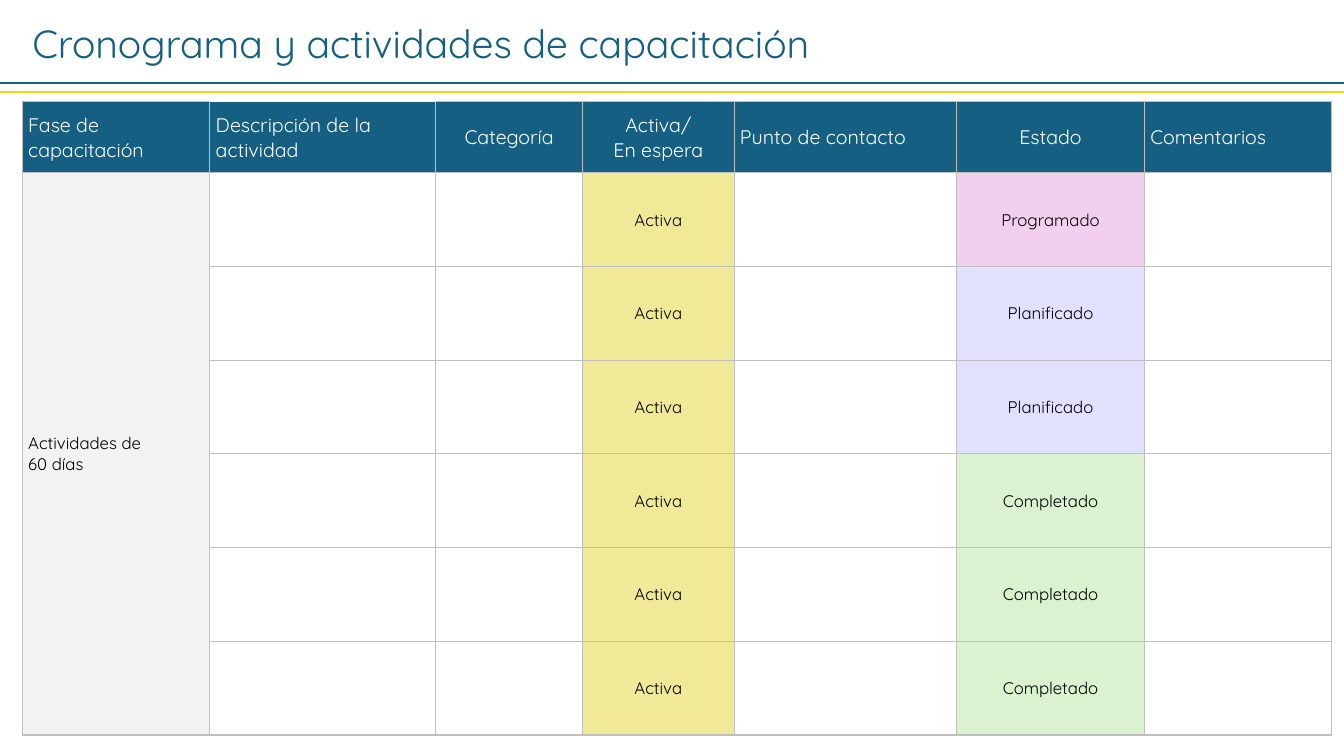
import dataclasses

import lxml.etree
import pptx
import pptx.dml.color
import pptx.enum.shapes
import pptx.enum.text
import pptx.oxml.ns
import pptx.util

Inches = pptx.util.Inches
Align = pptx.enum.text.PP_ALIGN
Anchor = pptx.enum.text.MSO_ANCHOR


@dataclasses.dataclass(frozen=True)
class Theme:
    font: str = "Quicksand"
    blue: str = "156082"
    yellow: str = "E8DD06"
    white: str = "FFFFFF"
    black: str = "000000"
    border: str = "BFBFBF"
    phase: str = "F2F2F2"
    active: str = "F0EA98"
    scheduled: str = "F2CEEF"
    planned: str = "E1E1FF"
    completed: str = "DAF2D0"
    title_size: int = 28
    header_size: int = 14
    body_size: int = 12
    thin: float = 0.5
    thick: float = 1.5


THEME = Theme()
SLIDE_WIDTH, SLIDE_HEIGHT = 13.33, 7.5
COLUMN_WIDTHS = [1.86, 2.24, 1.46, 1.5, 2.21, 1.86, 1.86]
HEADER_HEIGHT, ROW_HEIGHT = 0.7, 0.93
CENTERED_COLUMNS = {2, 3, 5}
ACTIVE_COLUMN, STATUS_COLUMN = 3, 5
HEADERS = [
    "Fase de capacitación",
    "Descripción de la actividad",
    "Categoría",
    "Activa/\nEn espera",
    "Punto de contacto",
    "Estado",
    "Comentarios",
]
STATUSES = ["Programado"] + ["Planificado"] * 2 + ["Completado"] * 3
STATUS_FILLS = {
    "Programado": THEME.scheduled,
    "Planificado": THEME.planned,
    "Completado": THEME.completed,
}


def rgb(value):
    return pptx.dml.color.RGBColor.from_string(value)


def assign(target, values):
    for name, value in values.items():
        setattr(target, name, value)


class SlideBuilder:
    def __init__(self, slide, theme):
        self.slide = slide
        self.theme = theme

    def set_text(self, frame, text, size, color, align):
        frame.text = text
        for para in frame.paragraphs:
            para.alignment = align
            for span in para.runs:
                assign(span.font, {
                    "name": self.theme.font,
                    "size": pptx.util.Pt(size),
                    "bold": False,
                })
                span.font.color.rgb = rgb(color)

    def title(self, text, left, top, width, height):
        box = self.slide.shapes.title
        assign(box, {
            "left": Inches(left), "top": Inches(top),
            "width": Inches(width), "height": Inches(height),
        })
        assign(box.text_frame, {
            "word_wrap": True,
            "vertical_anchor": Anchor.TOP,
            "auto_size": pptx.enum.text.MSO_AUTO_SIZE.NONE,
        })
        self.set_text(box.text_frame, text, self.theme.title_size,
                      self.theme.blue, Align.LEFT)

    def rule(self, top, color):
        line = self.slide.shapes.add_connector(
            pptx.enum.shapes.MSO_CONNECTOR.STRAIGHT,
            0, Inches(top), Inches(SLIDE_WIDTH), Inches(top))
        line.line.color.rgb = rgb(color)
        line.line.width = pptx.util.Pt(self.theme.thick)
        lxml.etree.SubElement(line._element.spPr, pptx.oxml.ns.qn("a:effectLst"))

    def table(self, left, top, widths, heights):
        table = self.slide.shapes.add_table(
            len(heights), len(widths), Inches(left), Inches(top),
            Inches(sum(widths)), Inches(sum(heights))).table
        assign(table, {"first_row": False, "horz_banding": False})
        for column, width in zip(table.columns, widths):
            column.width = Inches(width)
        for row, height in zip(table.rows, heights):
            row.height = Inches(height)
        return table

    def borders(self, cell, widths):
        properties = cell._tc.get_or_add_tcPr()
        qn = pptx.oxml.ns.qn
        for side, width in widths.items():
            line = lxml.etree.SubElement(
                properties, qn(f"a:ln{side}"), w=str(pptx.util.Pt(width)))
            if width:
                fill = lxml.etree.SubElement(line, qn("a:solidFill"))
                lxml.etree.SubElement(fill, qn("a:srgbClr"), val=self.theme.border)
            else:
                lxml.etree.SubElement(line, qn("a:noFill"))

    def cell(self, cell, text, fill, size, color, centered, edges):
        self.borders(cell, edges)
        cell.fill.solid()
        cell.fill.fore_color.rgb = rgb(fill)
        assign(cell, {
            "margin_left": Inches(0.01 if centered else 0.06),
            "margin_right": Inches(0.01),
            "margin_top": Inches(0.01),
            "margin_bottom": 0,
            "vertical_anchor": Anchor.MIDDLE,
        })
        if text:
            self.set_text(cell.text_frame, text, size, color,
                          Align.CENTER if centered else Align.LEFT)


def body_content(row, column):
    if column == 0:
        return ("Actividades de\n60 días" if row == 1 else ""), THEME.phase
    if column == ACTIVE_COLUMN:
        return "Activa", THEME.active
    if column == STATUS_COLUMN:
        status = STATUSES[row - 1]
        return status, STATUS_FILLS[status]
    return "", THEME.white


def fill_schedule(builder, table):
    last_row = len(STATUSES)
    table.cell(1, 0).merge(table.cell(last_row, 0))
    for row in range(last_row + 1):
        for column, header in enumerate(HEADERS):
            edges = dict.fromkeys("LRTB", THEME.thin)
            if row == last_row or (row and column == 0):
                edges["B"] = THEME.thick
            if row == 0:
                text, fill = header, THEME.blue
                size, color = THEME.header_size, THEME.white
                if column == 1:
                    edges["T"] = 0
            else:
                text, fill = body_content(row, column)
                size, color = THEME.body_size, THEME.black
            builder.cell(table.cell(row, column), text, fill, size, color,
                         column in CENTERED_COLUMNS, edges)


def main():
    deck = pptx.Presentation()
    assign(deck, {"slide_width": Inches(SLIDE_WIDTH),
                  "slide_height": Inches(SLIDE_HEIGHT)})
    page = deck.slides.add_slide(deck.slide_layouts.get_by_name("Title Only"))
    builder = SlideBuilder(page, THEME)
    heights = [HEADER_HEIGHT] + [ROW_HEIGHT] * len(STATUSES)
    fill_schedule(builder, builder.table(0.22, 1.01, COLUMN_WIDTHS, heights))
    builder.title("Cronograma y actividades de capacitación", 0.22, 0.14, 10.69, 0.57)
    builder.rule(0.82, THEME.blue)
    builder.rule(0.91, THEME.yellow)
    deck.save("out.pptx")


if __name__ == "__main__":
    main()
